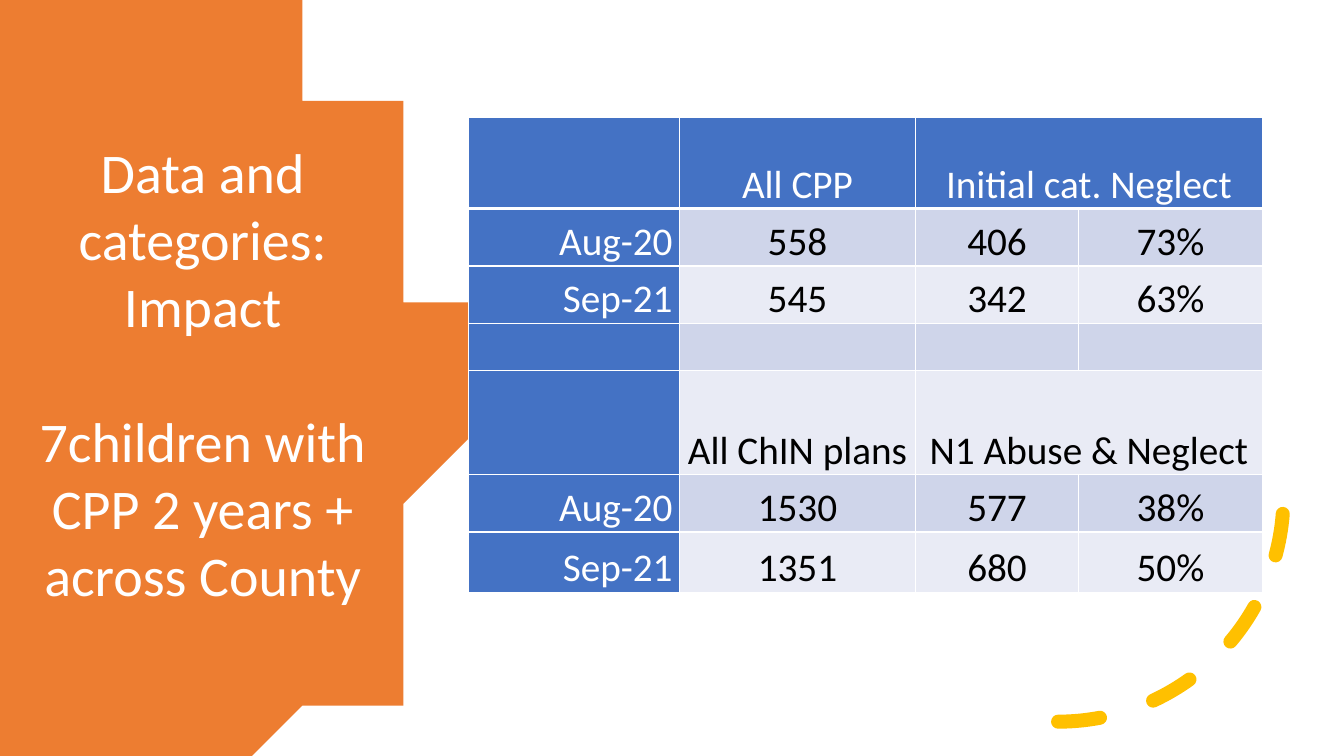
"""Build the slide on data and categories: a title on a disc beside a table."""
from math import asin, cos, sin
from lxml import etree
from pptx import Presentation
from pptx.dml.color import RGBColor
from pptx.enum.dml import MSO_LINE
from pptx.enum.shapes import MSO_SHAPE
from pptx.enum.text import MSO_ANCHOR, MSO_AUTO_SIZE, PP_ALIGN
from pptx.oxml.ns import qn
from pptx.util import Inches, Pt

TITLE = ["Data and categories: Impact", "7children with CPP 2 years + across County"]
ROWS = [
    ["", "All CPP", "Initial cat. Neglect", ""],
    ["Aug-20", "558", "406", "73%"],
    ["Sep-21", "545", "342", "63%"],
    ["", "", "", ""],
    ["", "All ChIN plans", "N1 Abuse & Neglect", ""],
    ["Aug-20", "1530", "577", "38%"],
    ["Sep-21", "1351", "680", "50%"],
]
WIDE = [2.09, 2.34, 1.62, 1.82]
HIGH = [0.91, 0.57, 0.57, 0.47, 1.03, 0.57, 0.6]
SPANS = [0, 4]

ORANGE = RGBColor(0xED, 0x7D, 0x31)
GOLD = RGBColor(0xFF, 0xC0, 0x00)
BLUE = RGBColor(0x44, 0x72, 0xC4)
BANDS = [RGBColor(0xE9, 0xEB, 0xF5), RGBColor(0xCF, 0xD5, 0xEA)]
WHITE = RGBColor(0xFF, 0xFF, 0xFF)
BLACK = RGBColor(0, 0, 0)
CENTER, RIGHT = PP_ALIGN.CENTER, PP_ALIGN.RIGHT
MIDDLE, BOTTOM = MSO_ANCHOR.MIDDLE, MSO_ANCHOR.BOTTOM
GROW, DASH, ARC = MSO_AUTO_SIZE.SHAPE_TO_FIT_TEXT, MSO_LINE.DASH, MSO_SHAPE.ARC

W, H = 13.33, 7.5
EDGE, RADIUS, STEPS = 4.56, 4.41, 80


def assign(thing, **values):
    for name, value in values.items():
        setattr(thing, name, value)


def place(shape, *box):
    names = ("left", "top", "width", "height")
    assign(shape, **dict(zip(names, map(Inches, box))))


def style(para, size, color, align):
    para.alignment = align
    assign(para.font, name="Calibri", size=Pt(size), bold=False)
    para.font.color.rgb = color


def add_disc(slide):
    bound = asin(H / 2 / RADIUS)
    turns = [bound * (2 * i / STEPS - 1) for i in range(STEPS + 1)]
    rim = [(EDGE - RADIUS + RADIUS * cos(t), H / 2 + RADIUS * sin(t)) for t in turns]
    pen = slide.shapes.build_freeform(0, 0, scale=Inches(1))
    pen.add_line_segments(rim + [(0, H)], close=True)
    disc = pen.convert_to_shape()
    disc.shadow.inherit = False
    disc.fill.solid()
    disc.fill.fore_color.rgb = ORANGE
    disc.line.fill.background()


def add_arc(slide):
    arc = slide.shapes.add_shape(ARC, 0, 0, 0, 0)
    place(arc, 8.26, 2.69, 4.47, 4.47)
    arc.shadow.inherit = False
    arc.fill.background()
    arc.line.color.rgb = GOLD
    assign(arc.line, width=Pt(10), dash_style=DASH)
    props = arc.element.spPr
    props.find(qn("a:xfrm")).set("flipV", "1")
    props.find(qn("a:ln")).set("cap", "rnd")


def add_title(slide):
    title = slide.shapes.title
    slide.shapes.element.append(title.element)
    place(title, 0, 1.29, 4.02, 4.81)
    frame = title.text_frame
    frame.text = "\n".join(TITLE)
    assign(frame, word_wrap=True, auto_size=GROW, vertical_anchor=MIDDLE)
    for para in frame.paragraphs:
        style(para, 40, WHITE, CENTER)
    frame.paragraphs[1].space_before = Pt(48)


def add_edges(cell, foot):
    props = cell._tc.get_or_add_tcPr()
    for side, size in zip("LRTB", (1, 1, 1, foot)):
        line = etree.SubElement(props, qn(f"a:ln{side}"), w=str(Pt(size)))
        fill = etree.SubElement(line, qn("a:solidFill"))
        etree.SubElement(fill, qn("a:srgbClr"), val=str(WHITE))


def add_grid(slide):
    frame = slide.shapes.add_table(
        len(HIGH), len(WIDE), Inches(4.65), Inches(1.16),
        Inches(sum(WIDE)), Inches(sum(HIGH)))
    table = frame.table
    for col, size in zip(table.columns, WIDE):
        col.width = Inches(size)
    for row, size in zip(table.rows, HIGH):
        row.height = Inches(size)
    for r, row in enumerate(ROWS):
        for c, text in enumerate(row):
            cell = table.cell(r, c)
            head = r == 0 or c == 0
            add_edges(cell, 1 if r else 3)
            cell.fill.solid()
            cell.fill.fore_color.rgb = BLUE if head else BANDS[r % 2]
            if text:
                cell.text = text
                assign(cell, vertical_anchor=BOTTOM, margin_top=0, margin_bottom=0,
                       margin_left=Inches(0.07), margin_right=Inches(0.07))
                style(cell.text_frame.paragraphs[0], 28,
                      WHITE if head else BLACK, CENTER if c else RIGHT)
    for r in SPANS:
        table.cell(r, 2).merge(table.cell(r, 3))


def main():
    deck = Presentation()
    assign(deck, slide_width=Inches(W), slide_height=Inches(H))
    slide = deck.slides.add_slide(deck.slide_layouts[5])
    for draw in (add_disc, add_arc, add_title, add_grid):
        draw(slide)
    deck.save("out.pptx")


if __name__ == "__main__":
    main()
